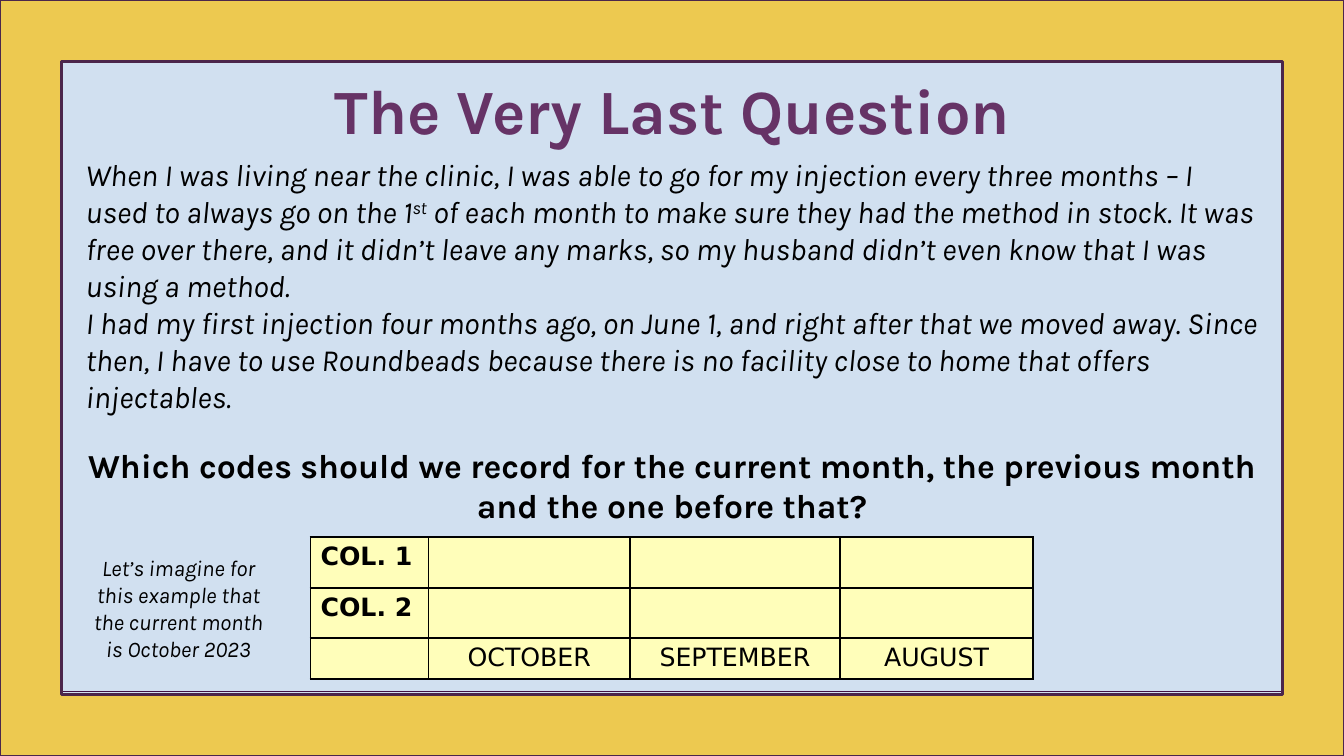
from dataclasses import dataclass

from lxml import etree
from pptx import Presentation
from pptx.dml.color import RGBColor
from pptx.enum.shapes import MSO_CONNECTOR, MSO_SHAPE
from pptx.enum.text import MSO_ANCHOR, MSO_AUTO_SIZE, PP_ALIGN
from pptx.oxml import parse_xml
from pptx.oxml.ns import nsdecls, qn
from pptx.util import Inches, Pt

SKY = RGBColor(0xD1, 0xE0, 0xF0)
GOLD = RGBColor(0xED, 0xC9, 0x50)
PLUM = RGBColor(0x4B, 0x26, 0x4B)
DARK_PLUM = RGBColor(0x41, 0x10, 0x44)
PURPLE = RGBColor(0x66, 0x33, 0x66)
CREAM = RGBColor(0xFF, 0xFE, 0xBA)
BLACK = RGBColor(0, 0, 0)

TITLE = {"name": "Karla", "size": Pt(45), "bold": True}
STORY = {"name": "Karla", "size": Pt(22), "italic": True}
QUESTION = {"name": "Karla", "size": Pt(24), "bold": True}
ASIDE = {"name": "Karla", "size": Pt(16), "italic": True}
CODE = {"name": "DejaVu Sans", "size": Pt(18), "bold": True}
MONTH = {"name": "DejaVu Sans", "size": Pt(18), "bold": False}


@dataclass(frozen=True)
class Passage:
    pieces: tuple[str, ...]  # every second piece is superscript
    style: dict
    align: PP_ALIGN = PP_ALIGN.LEFT
    space_before: float = 0


@dataclass(frozen=True)
class Block:
    left: float
    top: float
    width: float
    height: float
    passages: tuple[Passage, ...]


BLOCKS = (
    Block(0.75, 1.5, 11.83, 3.84, (
        Passage((
            "When I was living near the clinic, I was able to go for my injection every "
            "three months – I used to always go on the 1",
            "st",
            " of each month to make sure they had the method in stock. It was free over "
            "there, and it didn’t leave any marks, so my husband didn’t even know that I "
            "was using a method.",
        ), STORY),
        Passage((
            "I had my first injection four months ago, on June 1, and right after that we "
            "moved away. Since then, I have to use Roundbeads because there is no facility "
            "close to home that offers injectables.",
        ), STORY),
        Passage((
            "Which codes should we record for the current month, the previous month and "
            "the one before that?",
        ), QUESTION, PP_ALIGN.CENTER, 21.5),
    )),
    Block(0.75, 5.45, 2.04, 1.18, (
        Passage((
            "Let’s imagine for this example that the current month is October 2023",
        ), ASIDE, PP_ALIGN.CENTER),
    )),
)

CALENDAR = (
    ("COL. 1", "", "", ""),
    ("COL. 2", "", "", ""),
    ("", "OCTOBER", "SEPTEMBER", "AUGUST"),
)
COLUMN_WIDTHS = (1.17, 2, 2.08, 1.92)
ROW_HEIGHTS = (0.5, 0.5, 0.41)


def add_run(paragraph, text: str, style: dict, color: RGBColor = BLACK):
    run = paragraph.add_run()
    run.text = text
    for attribute, value in style.items():
        setattr(run.font, attribute, value)
    run.font.color.rgb = color
    return run


def add_title(slide, text: str) -> None:
    title = slide.shapes.title
    place = {"left": 2.21, "top": 0.58, "width": 8.92, "height": 1}
    for attribute, value in place.items():
        setattr(title, attribute, Inches(value))
    frame = title.text_frame
    frame.auto_size = MSO_AUTO_SIZE.NONE
    frame.vertical_anchor = MSO_ANCHOR.MIDDLE
    frame.paragraphs[0].alignment = PP_ALIGN.CENTER
    add_run(frame.paragraphs[0], text, TITLE, PURPLE)


def add_block(slide, block: Block) -> None:
    box = slide.shapes.add_textbox(
        Inches(block.left), Inches(block.top), Inches(block.width), Inches(block.height))
    frame = box.text_frame
    frame.word_wrap = True
    for number, passage in enumerate(block.passages):
        paragraph = frame.add_paragraph() if number else frame.paragraphs[0]
        paragraph.alignment = passage.align
        if passage.space_before:
            paragraph.space_before = Pt(passage.space_before)
        for index, piece in enumerate(passage.pieces):
            run = add_run(paragraph, piece, passage.style)
            if index % 2:
                run.font._element.set("baseline", "30000")


def add_base_line(slide) -> None:
    line = slide.shapes.add_connector(
        MSO_CONNECTOR.STRAIGHT, Inches(12.88), Inches(6.86), Inches(0.46), Inches(6.86))
    line.line.color.rgb = DARK_PLUM
    line.line.width = Pt(1.25)
    etree.SubElement(line._element.spPr, qn("a:effectLst"))


def add_border(slide, width: int, height: int) -> None:
    border = slide.shapes.add_shape(MSO_SHAPE.FRAME, 0, 0, width, height)
    border.adjustments[0] = 0.081
    border.shadow.inherit = False
    border.fill.solid()
    border.fill.fore_color.rgb = GOLD
    border.line.color.rgb = PLUM
    border.line.width = Pt(2)


def format_cell(cell) -> None:
    properties = cell._tc.get_or_add_tcPr()
    for side in ("lnL", "lnR", "lnT", "lnB"):
        properties.append(parse_xml(
            f'<a:{side} {nsdecls("a")} w="{Pt(1.5)}"><a:solidFill>'
            f'<a:srgbClr val="{BLACK}"/></a:solidFill></a:{side}>'))
    cell.fill.solid()
    cell.fill.fore_color.rgb = CREAM


def add_calendar(slide) -> None:
    table = slide.shapes.add_table(
        len(CALENDAR), len(COLUMN_WIDTHS), Inches(3.08), Inches(5.33),
        Inches(sum(COLUMN_WIDTHS)), Inches(sum(ROW_HEIGHTS))).table
    table.first_row = table.horz_banding = False
    for column, width in zip(table.columns, COLUMN_WIDTHS):
        column.width = Inches(width)
    for row, height, texts in zip(table.rows, ROW_HEIGHTS, CALENDAR):
        row.height = Inches(height)
        for index, (cell, text) in enumerate(zip(row.cells, texts)):
            format_cell(cell)
            if text:
                paragraph = cell.text_frame.paragraphs[0]
                paragraph.alignment = PP_ALIGN.CENTER if index else PP_ALIGN.LEFT
                add_run(paragraph, text, MONTH if index else CODE)


def main() -> None:
    deck = Presentation()
    deck.slide_width, deck.slide_height = Inches(13.33), Inches(7.5)
    slide = deck.slides.add_slide(deck.slide_layouts.get_by_name("Title Only"))
    slide.background.fill.solid()
    slide.background.fill.fore_color.rgb = SKY

    add_base_line(slide)
    add_title(slide, "The Very Last Question")
    add_border(slide, deck.slide_width, deck.slide_height)
    for block in BLOCKS:
        add_block(slide, block)
    add_calendar(slide)
    deck.save("out.pptx")


if __name__ == "__main__":
    main()
